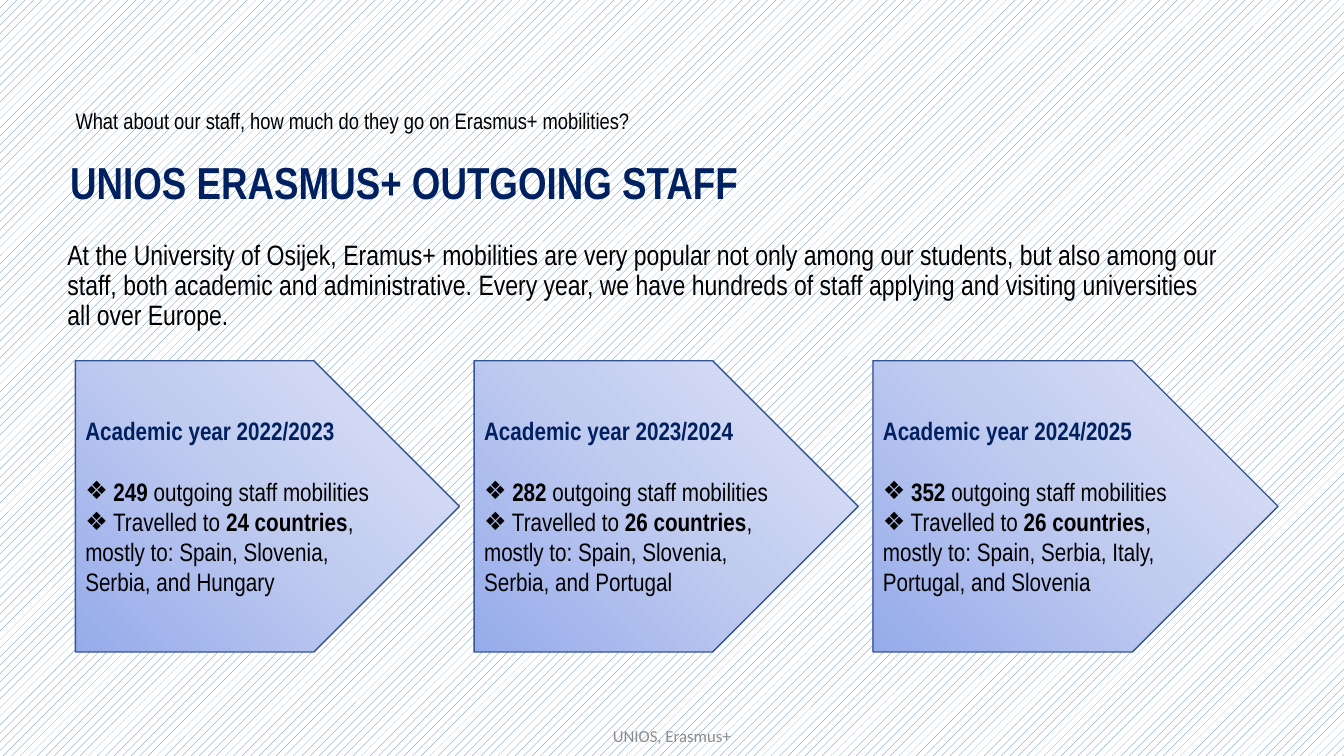
from lxml import etree
from pptx import Presentation
from pptx.dml.color import RGBColor
from pptx.enum.dml import MSO_PATTERN
from pptx.enum.shapes import MSO_SHAPE
from pptx.enum.text import MSO_ANCHOR, MSO_AUTO_SIZE, PP_ALIGN
from pptx.oxml import parse_xml
from pptx.oxml.ns import nsdecls, qn
from pptx.util import Cm, Pt

PENTAGON = MSO_SHAPE.PENTAGON
DOTS = MSO_PATTERN.PERCENT_20
TOP, MIDDLE = MSO_ANCHOR.TOP, MSO_ANCHOR.MIDDLE
LEFT, CENTER = PP_ALIGN.LEFT, PP_ALIGN.CENTER

NAVY = RGBColor(0x00, 0x20, 0x60)
BLACK = RGBColor(0x00, 0x00, 0x00)
WHITE = RGBColor(0xFF, 0xFF, 0xFF)
GREY = RGBColor(0x8C, 0x8C, 0x8C)
PATTERN_BLUE = RGBColor(0x44, 0x72, 0xC4)
OUTLINE_BLUE = RGBColor(0x32, 0x54, 0x91)
GRADIENT = [(0, RGBColor(0x96, 0xAB, 0xEA)),
            (50, RGBColor(0xC0, 0xCB, 0xF0)),
            (100, RGBColor(0xE0, 0xE5, 0xF7))]

QUESTION = "What about our staff, how much do they go on Erasmus+ mobilities?"
HEADING = "UNIOS ERASMUS+ OUTGOING STAFF"
INTRO = ("At the University of Osijek, Eramus+ mobilities are very popular not only "
         "among our students, but also among our staff, both academic and "
         "administrative. Every year, we have hundreds of staff applying and visiting "
         "universities all over Europe.")
# academic year, mobilities, countries, main destinations, arrow width in cm
YEARS = [
    ("2022/2023", 249, 24, "Spain, Slovenia, Serbia, and Hungary", 9.68),
    ("2023/2024", 282, 26, "Spain, Slovenia, Serbia, and Portugal", 9.68),
    ("2024/2025", 352, 26, "Spain, Serbia, Italy, Portugal, and Slovenia", 10.21),
]


def write(paragraph, *runs, size=18, color=BLACK, font="Arial Narrow",
          align=LEFT, spacing=1.0, after=0, bullet=None):
    """Fill a paragraph with (text, bold) runs."""
    paragraph.alignment = align
    paragraph.line_spacing = spacing
    paragraph.space_before = Pt(0)
    paragraph.space_after = Pt(after)
    if bullet:
        properties = paragraph._p.get_or_add_pPr()
        properties.set("marL", "0")
        properties.set("indent", "0")
        etree.SubElement(properties, qn("a:buFont")).set("typeface", "Arial")
        etree.SubElement(properties, qn("a:buChar")).set("char", bullet)
    for text, bold in runs:
        run = paragraph.add_run()
        run.text = text
        run.font.size = Pt(size)
        run.font.name = font
        run.font.bold = bold
        run.font.color.rgb = color


def place(shape, box):
    shape.left, shape.top, shape.width, shape.height = (Cm(length) for length in box)


def prepare_frame(shape, anchor=MIDDLE):
    frame = shape.text_frame
    frame.word_wrap = True
    frame.auto_size = MSO_AUTO_SIZE.NONE
    frame.vertical_anchor = anchor
    return frame


def add_label(slide, box, text, bold=False, anchor=MIDDLE, **style):
    label = slide.shapes.add_textbox(*(Cm(length) for length in box))
    frame = prepare_frame(label, anchor)
    write(frame.paragraphs[0], (text, bold), **style)


def add_header(slide, box):
    """Place question, heading and introduction in a box."""
    left, top, width, height = box
    question = slide.shapes.title
    place(question, (left + 0.2, top, width - 0.4, 0.94))
    write(prepare_frame(question).paragraphs[0], (QUESTION, False),
          size=16, spacing=0.9)
    add_label(slide, (left + 0.07, top + 1.07, 17.91, 1.93), HEADING, bold=True,
              size=32, color=NAVY, spacing=0.9)
    intro_top = 3.33
    add_label(slide, (left, top + intro_top, width, height - intro_top), INTRO,
              anchor=TOP, size=20, spacing=0.9)


def fill_from_corner(shape):
    """Apply a circular gradient that starts at the lower left corner."""
    stops = "".join(f'<a:gs pos="{position * 1000}"><a:srgbClr val="{color}"/></a:gs>'
                    for position, color in GRADIENT)
    shape.fill.gradient()
    plain = shape._element.spPr.find(qn("a:gradFill"))
    radial = parse_xml(
        f'<a:gradFill {nsdecls("a")} rotWithShape="1"><a:gsLst>{stops}</a:gsLst>'
        '<a:path path="circle"><a:fillToRect t="100000" r="100000"/></a:path>'
        '</a:gradFill>')
    plain.getparent().replace(plain, radial)


def add_year_arrow(slide, box, year, mobilities, countries, destinations):
    arrow = slide.shapes.add_shape(PENTAGON, *(Cm(length) for length in box))
    arrow.shadow.inherit = False
    fill_from_corner(arrow)
    arrow.line.color.rgb = OUTLINE_BLUE
    arrow.line.width = Pt(1)
    frame = prepare_frame(arrow)
    write(frame.paragraphs[0], (f"Academic year {year}", True), color=NAVY, after=21.5)
    write(frame.add_paragraph(), (f" {mobilities} ", True),
          ("outgoing staff mobilities", False), bullet="❖")
    write(frame.add_paragraph(), (" Travelled to ", False),
          (f"{countries} countries", True),
          (f", mostly to: {destinations}", False), bullet="❖")


def add_year_arrows(slide, box):
    left, top, width, height = box
    pitch = (width - YEARS[-1][-1]) / (len(YEARS) - 1)
    for index, (*facts, arrow_width) in enumerate(YEARS):
        add_year_arrow(slide, (left + index * pitch, top, arrow_width, height), *facts)


def main():
    presentation = Presentation()
    presentation.slide_width, presentation.slide_height = Cm(33.87), Cm(19.05)
    slide = presentation.slides.add_slide(presentation.slide_layouts[5])
    backdrop = slide.background.fill
    backdrop.patterned()
    backdrop.pattern = DOTS
    backdrop.fore_color.rgb = PATTERN_BLUE
    backdrop.back_color.rgb = WHITE
    add_header(slide, (1.45, 2.62, 29.61, 5.94))
    add_year_arrows(slide, (1.9, 9.09, 30.31, 7.34))
    add_label(slide, (6.93, 18.03, 20.01, 1.02), "UNIOS, Erasmus+",
              size=12, color=GREY, font="Calibri", align=CENTER)
    presentation.save("out.pptx")


if __name__ == "__main__":
    main()
